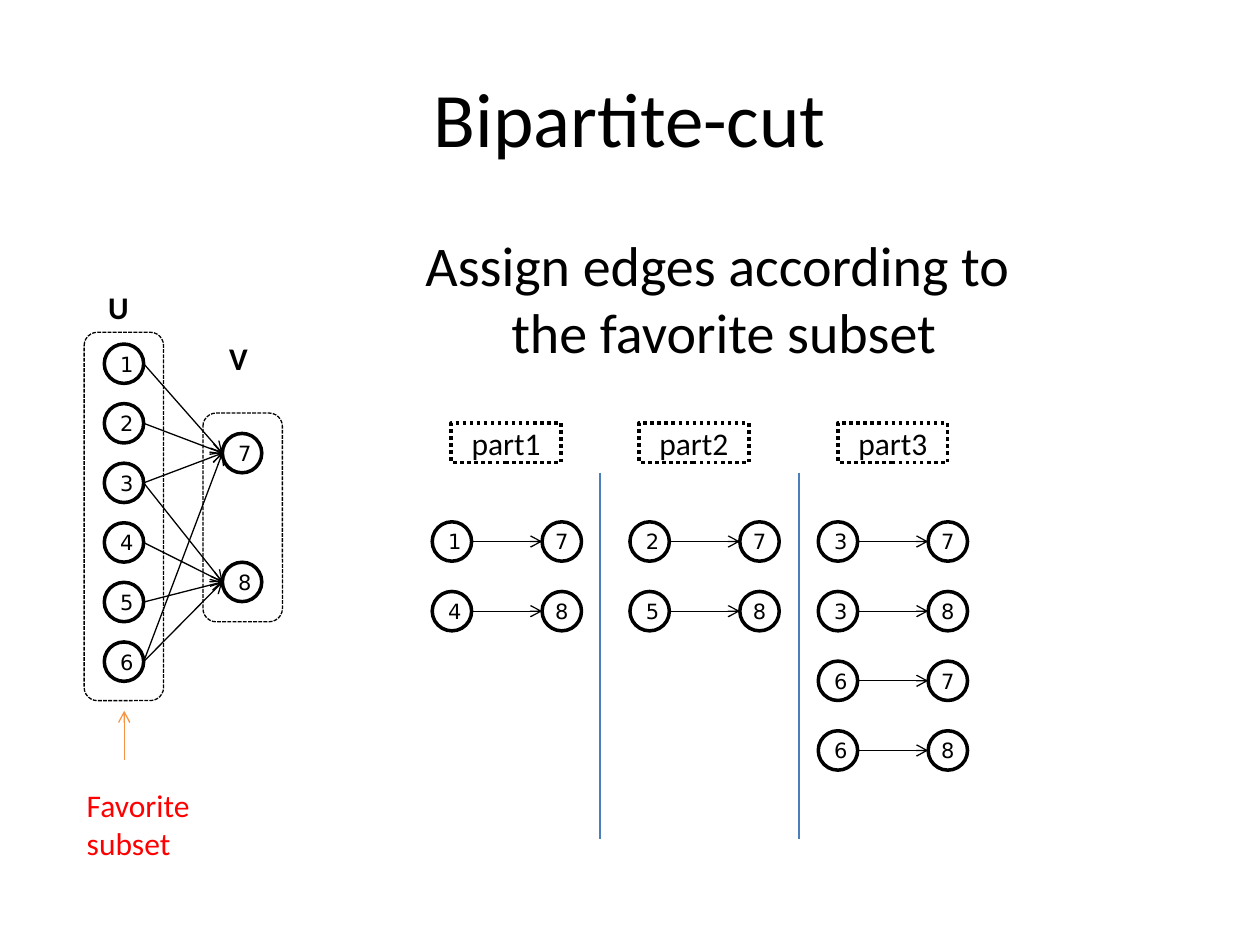
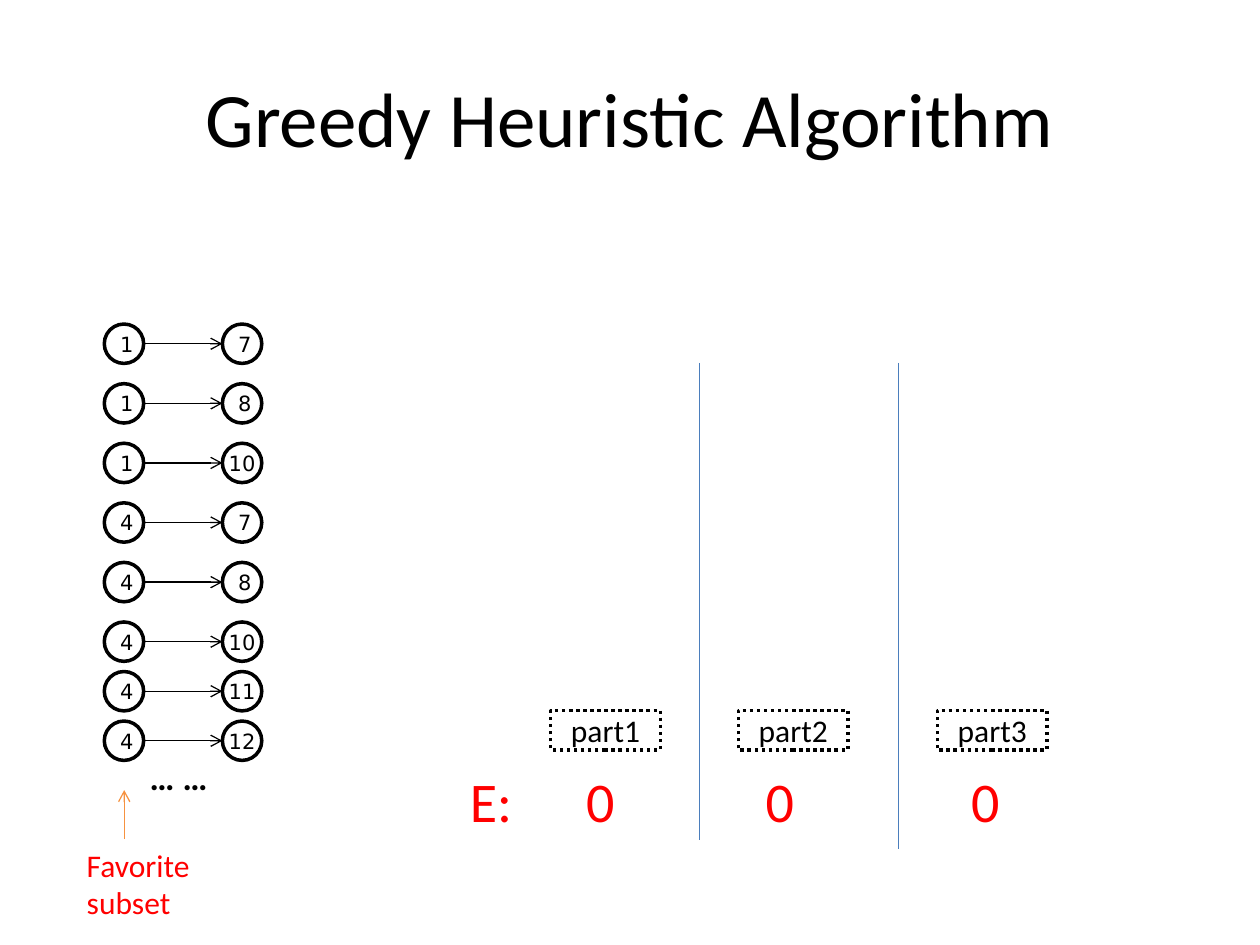
from pptx import Presentation
from pptx.dml.color import RGBColor
from pptx.enum.dml import MSO_LINE as DASH
from pptx.enum.shapes import MSO_CONNECTOR, MSO_SHAPE as SHAPE
from pptx.enum.text import MSO_ANCHOR as ANCHOR, PP_ALIGN as ALIGN
from pptx.oxml.ns import qn
from pptx.util import Pt
from lxml.etree import SubElement

BLACK = RGBColor(0x00, 0x00, 0x00)
WHITE = RGBColor(0xFF, 0xFF, 0xFF)
RED = RGBColor(0xFF, 0x00, 0x00)
BLUE = RGBColor(0x4B, 0x7E, 0xBC)
ORANGE = RGBColor(0xF6, 0x92, 0x40)

TITLES = ["Bipartite-cut", "Greedy Heuristic Algorithm"]
SUBTITLE = "Assign edges according to \vthe favorite subset"
FAVORITE = "Favorite\nsubset"
PARTS = ["part1", "part2", "part3"]
COUNTS = "E:\t0\t0\t0"
COUNT_TABS = [66.5, 169, 286.5]

U_NODES = ["1", "2", "3", "4", "5", "6"]
V_NODES = {"7": 247.7, "8": 321.3}
GRAPH_EDGES = [("1", "7"), ("2", "7"), ("3", "7"), ("4", "8"), ("5", "8"),
               ("6", "8"), ("3", "8"), ("6", "7")]
ASSIGNED = [
    (247, [("1", "7"), ("4", "8")]),
    (360, [("2", "7"), ("5", "8")]),
    (467.6, [("3", "7"), ("3", "8"), ("6", "7"), ("6", "8")]),
]
EDGE_STREAM = [("1", "7"), ("1", "8"), ("1", "10"), ("4", "7"), ("4", "8"),
               ("4", "10"), ("4", "11"), ("4", "12")]

NODE = 22.5
NODE_INSET = 5.76
U_X, V_X = 59.6, 127.1
ROW_STEP = 34.05
TIGHT_STEP = 28.3
PART_OFFSETS = [0, 107.3, 221]
DIVIDER_OFFSETS = [85, 198.8]


def write(sp, text, size=18, color=BLACK, font="Calibri", bold=False,
          align=ALIGN.LEFT, anchor=ANCHOR.TOP, wrap=True, inset=None, tabs=()):
    tf = sp.text_frame
    tf.word_wrap = wrap
    tf.vertical_anchor = anchor
    if inset is not None:
        tf.margin_left = tf.margin_right = Pt(inset)
        tf.margin_top = tf.margin_bottom = 0
    tf.text = text
    for p in tf.paragraphs:
        p.alignment = align
        if tabs:
            stops = SubElement(p._p.get_or_add_pPr(), qn("a:tabLst"))
            for pos in tabs:
                SubElement(stops, qn("a:tab"), pos=str(Pt(pos)), algn="l")
        for r in p.runs:
            r.font.size = Pt(size)
            r.font.name = font
            r.font.bold = bold
            r.font.color.rgb = color


def add_text(s, text, x, y, w, h, **fmt):
    write(s.shapes.add_textbox(Pt(x), Pt(y), Pt(w), Pt(h)), text, **fmt)


def add_box(s, kind, x, y, w, h, width=2, dash=None):
    sp = s.shapes.add_shape(kind, Pt(x), Pt(y), Pt(w), Pt(h))
    sp.shadow.inherit = False
    sp.fill.solid()
    sp.fill.fore_color.rgb = WHITE
    sp.line.color.rgb = BLACK
    sp.line.width = Pt(width)
    if dash:
        sp.line.dash_style = dash
    return sp


def add_line(s, x1, y1, x2, y2, color=BLACK, arrow=True):
    c = s.shapes.add_connector(MSO_CONNECTOR.STRAIGHT, Pt(x1), Pt(y1), Pt(x2), Pt(y2))
    c.line.color.rgb = color
    c.line.width = Pt(0.75)
    props = c._element.spPr
    if arrow:
        SubElement(props.find(qn("a:ln")), qn("a:tailEnd"), type="arrow")
    SubElement(props, qn("a:effectLst"))


def add_node(s, label, x, y, inset=NODE_INSET):
    sp = add_box(s, SHAPE.OVAL, x, y, NODE, NODE)
    write(sp, label, size=12, font="DejaVu Sans", align=ALIGN.CENTER,
          anchor=ANCHOR.MIDDLE, inset=inset)


def add_edge(s, x1, y1, x2, y2):
    add_line(s, x1 + NODE, y1 + NODE / 2, x2, y2 + NODE / 2)


def add_pair(s, pair, x1, x2, y, end_inset):
    add_node(s, pair[0], x1, y)
    add_node(s, pair[1], x2, y, inset=end_inset)
    add_edge(s, x1, y, x2, y)


def add_parts(s, x, y, top, bottoms):
    for name, dx in zip(PARTS, PART_OFFSETS):
        sp = add_box(s, SHAPE.RECTANGLE, x + dx, y, 62.8, 22.5, dash=DASH.ROUND_DOT)
        write(sp, name, align=ALIGN.CENTER, anchor=ANCHOR.MIDDLE)
    for dx, bottom in zip(DIVIDER_OFFSETS, bottoms):
        add_line(s, x + dx, top, x + dx, bottom, color=BLUE, arrow=False)


def add_favorite(s, text_y, arrow_y):
    add_text(s, FAVORITE, 42.5, text_y, 74.2, 51, color=RED, wrap=False)
    add_line(s, 71, arrow_y + 28, 71, arrow_y, color=ORANGE)


def add_slide(prs, title):
    s = prs.slides.add_slide(prs.slide_layouts[6])
    add_text(s, title, 36, 21.6, 648, 90, size=44, align=ALIGN.CENTER,
             anchor=ANCHOR.MIDDLE)
    return s


def build_cut(prs):
    s = add_slide(prs, TITLES[0])
    for x, y, h in [(116, 236, 119.3), (48.1, 189.9, 210.5)]:
        add_box(s, SHAPE.ROUNDED_RECTANGLE, x, y, 45.4, h, width=0.75,
                dash=DASH.SQUARE_DOT)
    add_text(s, SUBTITLE, 172.8, 128.2, 481.7, 319.7, size=32, align=ALIGN.CENTER)
    add_parts(s, 257.8, 241.8, 270, [479.5, 479.5])
    for x, pairs in ASSIGNED:
        for i, pair in enumerate(pairs):
            add_pair(s, pair, x, x + 62.8, 298.2 + 39.8 * i, 0)
    u_rows = {u: 196.6 + ROW_STEP * i for i, u in enumerate(U_NODES)}
    for x, rows in [(U_X, u_rows), (V_X, V_NODES)]:
        for label, y in rows.items():
            add_node(s, label, x, y)
    for u, v in GRAPH_EDGES:
        add_edge(s, U_X, u_rows[u], V_X, V_NODES[v])
    add_text(s, "U", 54.7, 161.3, 26, 29, bold=True, wrap=False)
    add_text(s, "V", 123.8, 190, 25.2, 29, bold=True, wrap=False)
    add_favorite(s, 445.7, 406.2)


def build_greedy(prs):
    s = add_slide(prs, TITLES[1])
    y = 185.2
    for i, pair in enumerate(EDGE_STREAM):
        add_pair(s, pair, U_X, V_X, y, 0 if len(pair[1]) > 1 else NODE_INSET)
        y += ROW_STEP if i < 5 else TIGHT_STEP
    add_parts(s, 314.6, 406, 207.4, [480.2, 485.3])
    add_text(s, COUNTS, 261.4, 434.2, 322.6, 46, size=32, color=RED, tabs=COUNT_TABS)
    add_favorite(s, 479.7, 451.5)
    add_text(s, "… …", 78.5, 428.4, 47.5, 31.5, size=20, bold=True, wrap=False)


def main():
    prs = Presentation()
    prs.slide_width, prs.slide_height = Pt(720), Pt(540)
    build_cut(prs)
    build_greedy(prs)
    prs.save("out.pptx")


if __name__ == "__main__":
    main()
